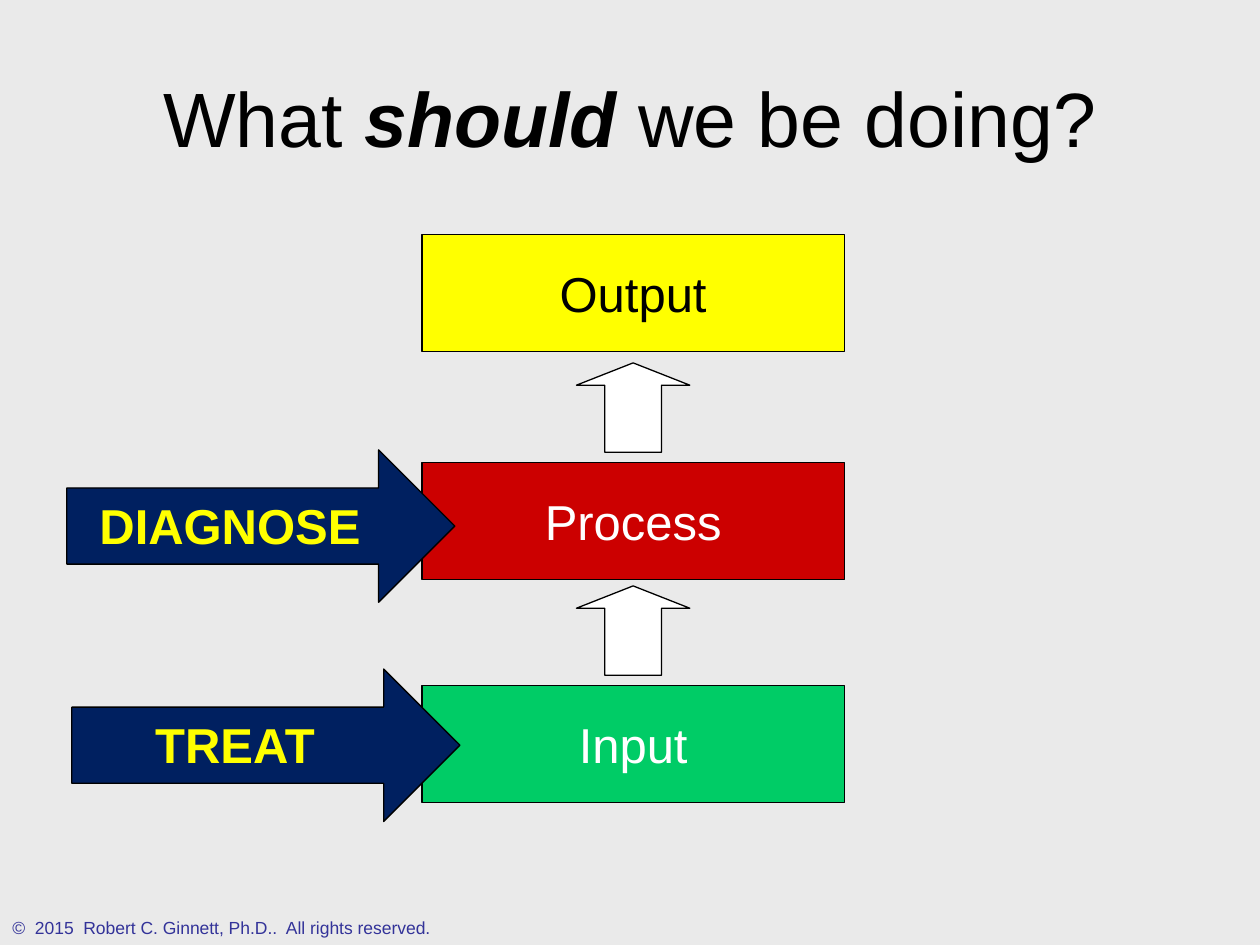
from pptx import Presentation
from pptx.dml.color import RGBColor
from pptx.enum.shapes import MSO_SHAPE as Preset
from pptx.enum.text import MSO_ANCHOR as Anchor, PP_ALIGN as Align
from pptx.util import Inches, Pt

BACKGROUND = RGBColor(0xEA, 0xEA, 0xEA)
BLACK = RGBColor(0, 0, 0)
WHITE = RGBColor(0xFF, 0xFF, 0xFF)
YELLOW = RGBColor(0xFF, 0xFF, 0)
RED = RGBColor(0xCC, 0, 0)
GREEN = RGBColor(0, 0xCC, 0x66)
NAVY = RGBColor(0, 0x20, 0x60)
INDIGO = RGBColor(0x33, 0x33, 0x99)

STAGE_LEFT, STAGE_WIDTH, STAGE_HEIGHT = 3.35, 3.35, 0.93
FLOW_WIDTH, FLOW_HEIGHT, FLOW_GAP = 0.9, 0.71, 0.08
STAGES = [
    ("Output", 1.86, YELLOW, BLACK),
    ("Process", 3.67, RED, WHITE),
    ("Input", 5.44, GREEN, WHITE),
]
ACTIONS = [("DIAGNOSE", 0.53, 3.57), ("TREAT", 0.57, 5.31)]


def box(left, top, width, height):
    return Inches(left), Inches(top), Inches(width), Inches(height)


def style_run(run, size, color, bold=False, italic=False):
    font = run.font
    font.name, font.size = "Arial", Pt(size)
    font.bold, font.italic = bold, italic
    font.color.rgb = color


def write_line(frame, text, size, color, align=Align.CENTER, bold=False):
    frame.text = text
    line = frame.paragraphs[0]
    line.alignment = align
    style_run(line.runs[0], size, color, bold)


def add_outlined(shapes, preset, area, fill):
    outlined = shapes.add_shape(preset, *area)
    outlined.shadow.inherit = False
    outlined.fill.solid()
    outlined.fill.fore_color.rgb = fill
    outlined.line.color.rgb = BLACK
    outlined.line.width = Pt(0.75)
    return outlined


def add_title(slide, area):
    title = slide.shapes.title
    title.left, title.top, title.width, title.height = area
    frame = title.text_frame
    frame.vertical_anchor = Anchor.MIDDLE
    line = frame.paragraphs[0]
    line.alignment = Align.CENTER
    for words, stressed in (("What ", False), ("should", True), (" we be doing?", False)):
        run = line.add_run()
        run.text = words
        style_run(run, 44, BLACK, stressed, stressed)


def add_stage(slide, area, name, fill, color):
    frame = add_outlined(slide.shapes, Preset.RECTANGLE, area, fill).text_frame
    frame.word_wrap = False
    frame.vertical_anchor = Anchor.MIDDLE
    write_line(frame, name, 28, color)


def add_flow_arrow(slide, area):
    arrow = add_outlined(slide.shapes, Preset.UP_ARROW, area, WHITE)
    arrow.adjustments[0] = 0.5
    arrow.adjustments[1] = 0.25


def add_action(slide, left, top, name):
    action = slide.shapes.add_group_shape()
    add_outlined(action.shapes, Preset.RIGHT_ARROW, box(left, top, 3.08, 1.21), NAVY)
    label = action.shapes.add_textbox(*box(left + 0.01, top + 0.31, 2.57, 0.57))
    label.text_frame.word_wrap = True
    write_line(label.text_frame, name, 28, YELLOW, bold=True)


def add_copyright(slide, area):
    frame = slide.shapes.add_textbox(*area).text_frame
    frame.word_wrap = False
    write_line(frame, "©  2015  Robert C. Ginnett, Ph.D..  All rights reserved.",
               10, INDIGO, Align.LEFT)


def main():
    deck = Presentation()
    deck.slide_width, deck.slide_height = Inches(10), Inches(7.5)
    slide = deck.slides.add_slide(deck.slide_layouts[5])
    slide.background.fill.solid()
    slide.background.fill.fore_color.rgb = BACKGROUND

    add_copyright(slide, box(0, 7.23, 3.55, 0.27))
    add_title(slide, box(0.5, 0.3, 9, 1.25))
    for name, top, fill, color in STAGES:
        add_stage(slide, box(STAGE_LEFT, top, STAGE_WIDTH, STAGE_HEIGHT), name, fill, color)
    flow_left = STAGE_LEFT + (STAGE_WIDTH - FLOW_WIDTH) / 2
    for _, top, _, _ in STAGES[1:]:
        flow_top = top - FLOW_GAP - FLOW_HEIGHT
        add_flow_arrow(slide, box(flow_left, flow_top, FLOW_WIDTH, FLOW_HEIGHT))
    for name, left, top in ACTIONS:
        add_action(slide, left, top, name)

    deck.save("out.pptx")


if __name__ == "__main__":
    main()
